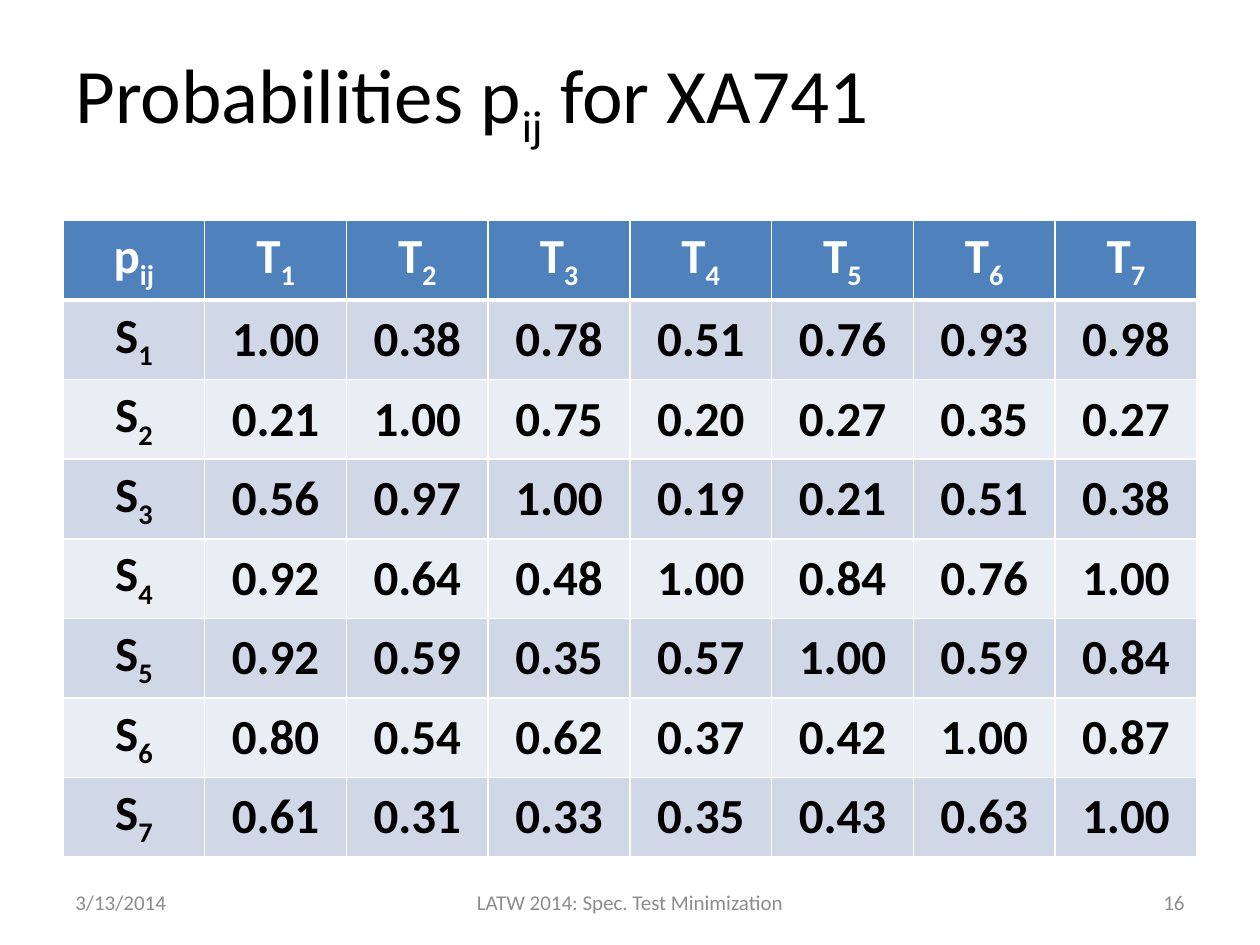
import pptx
import pptx.util
import pptx.dml.color
import pptx.enum.text
import pptx.oxml.ns
import lxml.etree
from dataclasses import dataclass


@dataclass(frozen=True)
class Theme:
    font: str = "Calibri"
    ink: str = "000000"
    paper: str = "FFFFFF"
    muted: str = "8C8C8C"
    head: str = "4F81BD"
    bands: tuple = ("D0D8E8", "E9EDF4")
    title: int = 44
    body: int = 28
    small: int = 12
    thin: int = 1
    thick: int = 3


ALIGN = pptx.enum.text.PP_ALIGN
MIDDLE = pptx.enum.text.MSO_ANCHOR.MIDDLE
VALUES = """
1.00 0.38 0.78 0.51 0.76 0.93 0.98
0.21 1.00 0.75 0.20 0.27 0.35 0.27
0.56 0.97 1.00 0.19 0.21 0.51 0.38
0.92 0.64 0.48 1.00 0.84 0.76 1.00
0.92 0.59 0.35 0.57 1.00 0.59 0.84
0.80 0.54 0.62 0.37 0.42 1.00 0.87
0.61 0.31 0.33 0.35 0.43 0.63 1.00
"""


class Deck:
    """Draws styled elements on one slide, placed by shares of its size."""

    def __init__(self, theme, width, height):
        self.theme = theme
        self.show = pptx.Presentation()
        self.show.slide_width = pptx.util.Inches(width)
        self.show.slide_height = pptx.util.Inches(height)
        self.slide = self.show.slides.add_slide(self.show.slide_layouts[6])

    def place(self, left, top, width, height):
        wide, high = self.show.slide_width, self.show.slide_height
        return [int(n) for n in (left * wide, top * high, width * wide, height * high)]

    def runs(self, para, parts, size, color, align, bold=False):
        para.alignment = align
        for order, text in enumerate(parts):
            run = para.add_run()
            run.text = text
            run.font.name = self.theme.font
            run.font.size = pptx.util.Pt(size)
            run.font.bold = bold
            run.font.color.rgb = pptx.dml.color.RGBColor.from_string(color)
            if order % 2:
                run._r.get_or_add_rPr().set("baseline", "-25000")

    def text(self, area, parts, size, color, align=ALIGN.LEFT):
        frame = self.slide.shapes.add_textbox(*self.place(*area)).text_frame
        frame.word_wrap = True
        frame.vertical_anchor = MIDDLE
        self.runs(frame.paragraphs[0], parts, size, color, align)

    def border(self, cell, side, width):
        props = cell._tc.get_or_add_tcPr()
        name = pptx.oxml.ns.qn
        line = lxml.etree.SubElement(props, name(f"a:ln{side}"), w=str(int(pptx.util.Pt(width))))
        fill = lxml.etree.SubElement(line, name("a:solidFill"))
        lxml.etree.SubElement(fill, name("a:srgbClr"), val=self.theme.paper)

    def cell(self, cell, parts, row):
        look = self.theme
        for side in "LRTB":
            heavy = (row, side) in ((0, "B"), (1, "T"))
            self.border(cell, side, look.thick if heavy else look.thin)
        cell.fill.solid()
        fill = look.bands[(row - 1) % 2] if row else look.head
        cell.fill.fore_color.rgb = pptx.dml.color.RGBColor.from_string(fill)
        cell.vertical_anchor = MIDDLE
        color = look.ink if row else look.paper
        self.runs(cell.text_frame.paragraphs[0], parts, look.body, color, ALIGN.CENTER, True)

    def table(self, area, rows):
        shape = self.slide.shapes.add_table(len(rows), len(rows[0]), *self.place(*area))
        for row, line in enumerate(rows):
            for col, parts in enumerate(line):
                self.cell(shape.table.cell(row, col), parts, row)


def main():
    look = Theme()
    deck = Deck(look, 10, 7.5)
    deck.text((0.05, 0.04, 0.9, 0.13), ("Probabilities p", "ij", " for XA741"), look.title, look.ink)

    foot = (
        (0.05, 0.23, "3/13/2014", ALIGN.LEFT),
        (0.34, 0.32, "LATW 2014: Spec. Test Minimization", ALIGN.CENTER),
        (0.72, 0.23, "16", ALIGN.RIGHT),
    )
    for left, width, text, align in foot:
        deck.text((left, 0.93, width, 0.05), (text,), look.small, look.muted, align)

    data = [line.split() for line in VALUES.strip().splitlines()]
    rows = [[("p", "ij")] + [("T", str(n + 1)) for n in range(len(data[0]))]]
    for order, line in enumerate(data, 1):
        rows.append([("S", str(order))] + [(value,) for value in line])
    deck.table((0.05, 7 / 30, 0.9, 0.6), rows)
    deck.show.save("out.pptx")


if __name__ == "__main__":
    main()
